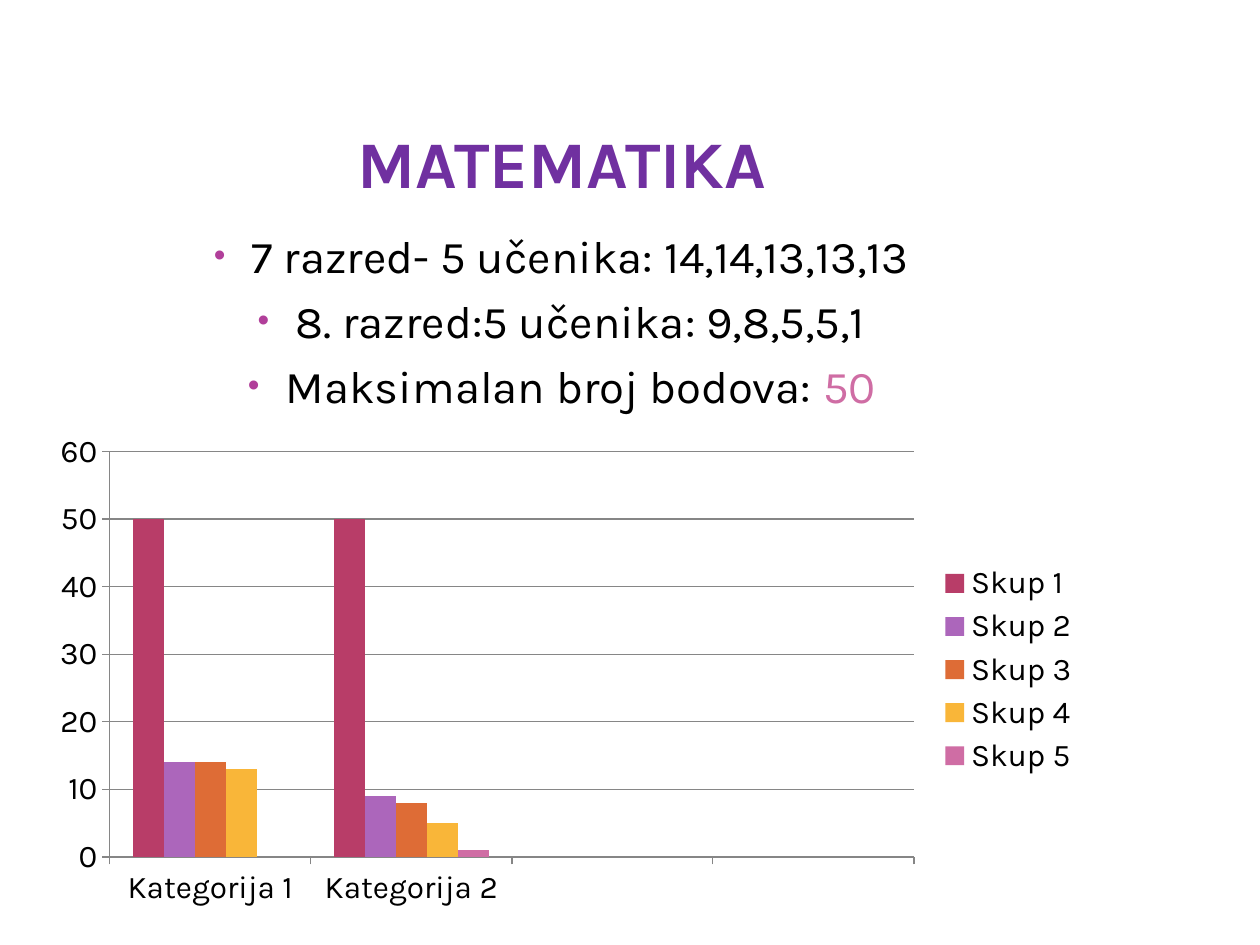
from dataclasses import dataclass

from lxml.etree import SubElement
from pptx import Presentation
from pptx.chart.data import CategoryChartData
from pptx.dml.color import RGBColor
from pptx.enum.chart import XL_CHART_TYPE as ChartType
from pptx.enum.chart import XL_LEGEND_POSITION as LegendPosition
from pptx.enum.chart import XL_TICK_MARK as TickMark
from pptx.enum.text import MSO_ANCHOR as Anchor
from pptx.enum.text import MSO_AUTO_SIZE as AutoSize
from pptx.enum.text import PP_ALIGN as Align
from pptx.oxml.ns import qn
from pptx.util import Pt

PX = 9144


@dataclass(frozen=True)
class Theme:
    font: str = "Karla"
    title: str = "7030A0"
    outline: str = "5E1A50"
    text: str = "000000"
    bullet: str = "B13F9A"
    accent: str = "CF6DA4"
    axis: str = "868686"
    series: tuple = ("B83D68", "AC66BB", "DE6C36", "F9B639", "CF6DA4")
    title_size: int = 38
    body_size: int = 26
    chart_size: int = 18


THEME = Theme()

LINES = (
    ("7 razred- 5 učenika: 14,14,13,13,13", ""),
    ("8. razred:5 učenika: 9,8,5,5,1", ""),
    ("Maksimalan broj bodova: ", "50"),
)
CATEGORIES = ("Kategorija 1", "Kategorija 2", "", "")
SCORES = ((50, 50), (14, 9), (14, 8), (13, 5), (None, 1))


def px(length):
    return length * PX


def rgb(value):
    return RGBColor.from_string(value)


def style_font(font, size, color, bold=False):
    font.name = THEME.font
    font.size = Pt(size)
    font.bold = bold
    font.color.rgb = rgb(color)


def move(shape, box):
    shape.left, shape.top, shape.width, shape.height = map(px, box)


def add_bullet(para):
    properties = para._p.get_or_add_pPr()
    properties.set("marL", str(px(30)))
    properties.set("indent", str(px(-30)))
    color = SubElement(properties, qn("a:buClr"))
    SubElement(color, qn("a:srgbClr"), val=THEME.bullet)
    SubElement(properties, qn("a:buSzPct"), val="73000")
    SubElement(properties, qn("a:buFont"), typeface="Arial")
    SubElement(properties, qn("a:buChar"), char="•")


def add_outline(span):
    properties = span._r.get_or_add_rPr()
    line = SubElement(properties, qn("a:ln"), w="500")
    fill = SubElement(line, qn("a:solidFill"))
    SubElement(fill, qn("a:srgbClr"), val=THEME.outline)
    properties.insert(0, line)


def place_title(title, box):
    move(title, box)
    frame = title.text_frame
    frame.text = "MATEMATIKA"
    frame.auto_size = AutoSize.NONE
    frame.vertical_anchor = Anchor.BOTTOM
    frame.margin_left = frame.margin_right = px(5)
    frame.margin_top = frame.margin_bottom = 0
    para = frame.paragraphs[0]
    para.alignment = Align.CENTER
    span = para.runs[0]
    style_font(span.font, THEME.title_size, THEME.title, bold=True)
    add_outline(span)


def place_results(body, box):
    move(body, box)
    frame = body.text_frame
    frame.text = "\n".join(text for text, _ in LINES)
    frame.auto_size = AutoSize.NONE
    for index, (para, (_, score)) in enumerate(zip(frame.paragraphs, LINES)):
        para.alignment = Align.CENTER
        para.space_before = Pt(6 if index else 0)
        add_bullet(para)
        style_font(para.runs[0].font, THEME.body_size, THEME.text)
        if score:
            span = para.add_run()
            span.text = score
            style_font(span.font, THEME.body_size, THEME.accent)


def place_chart(page, box):
    data = CategoryChartData(number_format="General")
    data.categories = CATEGORIES
    for number, scores in enumerate(SCORES, 1):
        data.add_series(f"Skup {number}", scores + (None, None))
    chart = page.shapes.add_chart(
        ChartType.COLUMN_CLUSTERED, *map(px, box), data
    ).chart
    style_font(chart.font, THEME.chart_size, THEME.text)
    chart.has_title = False
    chart.has_legend = True
    chart.legend.position = LegendPosition.RIGHT
    chart.legend.include_in_layout = False

    plot = chart.plots[0]
    plot.vary_by_categories = False
    plot.gap_width = 150
    plot.overlap = 0
    for series, color in zip(plot.series, THEME.series):
        series.format.fill.solid()
        series.format.fill.fore_color.rgb = rgb(color)

    value_axis = chart.value_axis
    value_axis.minimum_scale = 0
    value_axis.maximum_scale = 60
    value_axis.major_unit = 10
    value_axis.has_major_gridlines = True
    for axis in (chart.category_axis, value_axis):
        axis.major_tick_mark = TickMark.OUTSIDE
        axis.format.line.color.rgb = rgb(THEME.axis)
    value_axis.major_gridlines.format.line.color.rgb = rgb(THEME.axis)


def build_results_page(deck):
    page = deck.slides.add_slide(deck.slide_layouts[1])
    place_title(page.shapes.title, (50, 35, 792, 125))
    place_results(page.placeholders[1], (50, 176, 792, 530))
    place_chart(page, (31, 336, 836, 391))


def main():
    deck = Presentation()
    deck.slide_width, deck.slide_height = px(1000), px(750)
    build_results_page(deck)
    deck.save("out.pptx")


if __name__ == "__main__":
    main()
